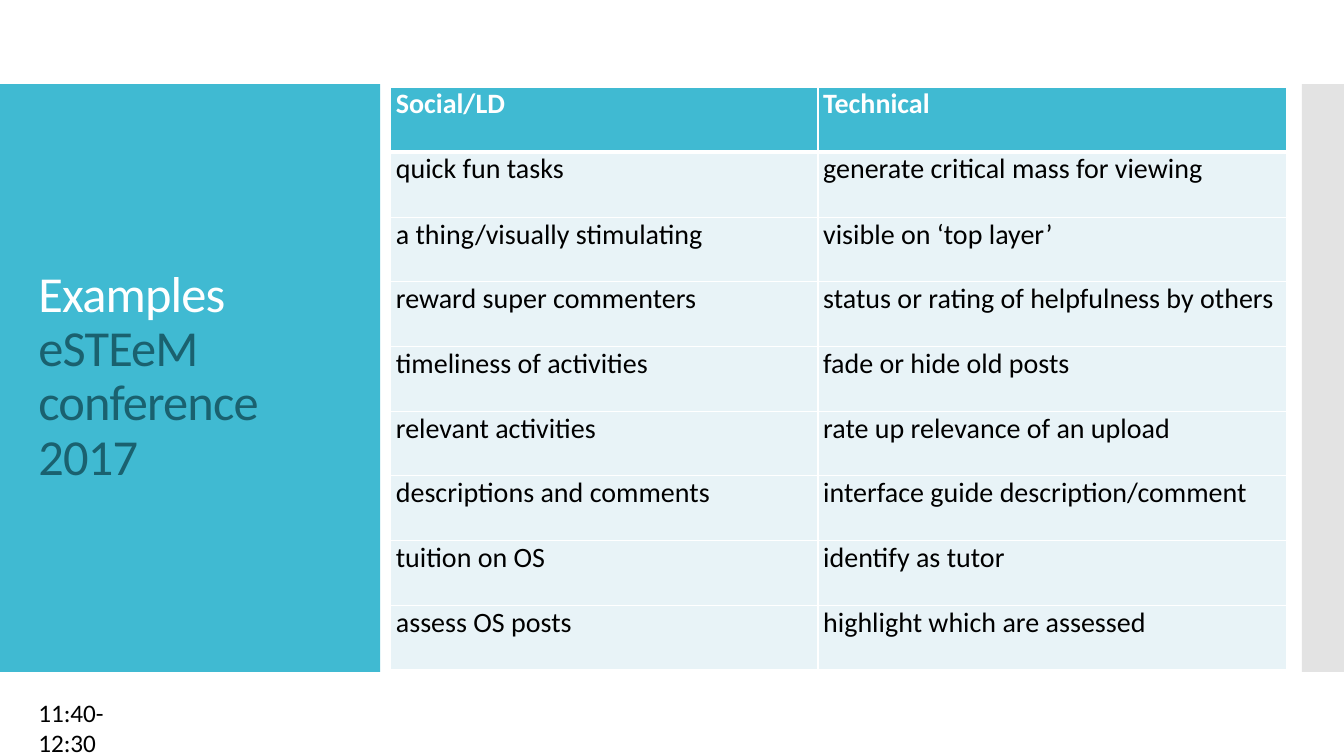
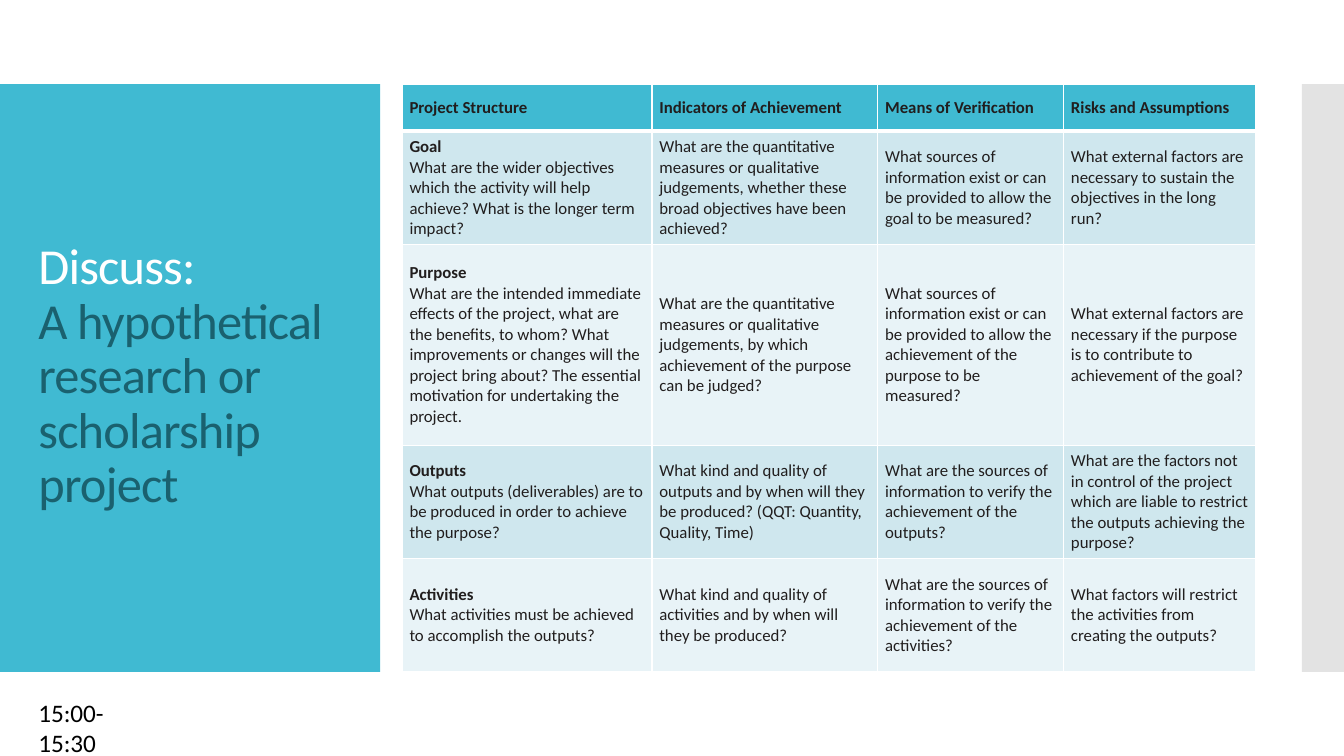
from dataclasses import dataclass

from copy import deepcopy
from lxml.etree import SubElement
from pptx import Presentation
from pptx.dml.color import RGBColor
from pptx.enum.shapes import MSO_SHAPE
from pptx.enum.text import MSO_ANCHOR, MSO_AUTO_SIZE, PP_ALIGN
from pptx.oxml.ns import qn
from pptx.util import Emu, Pt

EMU_PER_PX = 9525


def px(length):
    return Emu(length * EMU_PER_PX)


@dataclass(frozen=True)
class Theme:
    font: str = "Calibri"
    accent: str = "40BAD2"
    accent_dark: str = "1A616F"
    edge: str = "C8C8C8"
    white: str = "FFFFFF"
    black: str = "000000"
    ink: str = "211E1E"
    row_light: str = "E8F3F7"
    row_mid: str = "CFE7EE"
    title_size: int = 36
    time_size: int = 18
    ideas_size: int = 20
    framework_size: int = 12
    title_tracking: int = -60
    rule: int = 1
    header_rule: int = 3


@dataclass(frozen=True)
class TableLook:
    size: int
    header_colour: str
    text_colour: str
    row_fills: tuple
    side_margin: int
    end_margin: int
    anchor: MSO_ANCHOR


THEME = Theme()

IDEAS_LOOK = TableLook(THEME.ideas_size, THEME.white, THEME.black,
                       (THEME.row_light,), 5, 0, MSO_ANCHOR.TOP)
FRAMEWORK_LOOK = TableLook(THEME.framework_size, THEME.ink, THEME.ink,
                           (THEME.row_mid, THEME.row_light), 7, 3, MSO_ANCHOR.MIDDLE)

IDEAS = [
    ("Social/LD", "Technical"),
    ("quick fun tasks", "generate critical mass for viewing"),
    ("a thing/visually stimulating", "visible on ‘top layer’"),
    ("reward super commenters", "status or rating of helpfulness by others"),
    ("timeliness of activities", "fade or hide old posts"),
    ("relevant activities", "rate up relevance of an upload"),
    ("descriptions and comments", "interface guide description/comment"),
    ("tuition on OS", "identify as tutor"),
    ("assess OS posts", "highlight which are assessed"),
]

FRAMEWORK = [
    ("Project Structure", "Indicators of Achievement",
     "Means of Verification", "Risks and Assumptions"),
    ("Goal\nWhat are the wider objectives which the activity will help achieve? "
     "What is the longer term impact?",
     "What are the quantitative measures or qualitative judgements, "
     "whether these broad objectives have been achieved?",
     "What sources of information exist or can be provided to allow the goal to be measured?",
     "What external factors are necessary to sustain the objectives in the long run?"),
    ("Purpose\nWhat are the intended immediate effects of the project, what are the "
     "benefits, to whom? What improvements or changes will the project bring about? "
     "The essential motivation for undertaking the project.",
     "What are the quantitative measures or qualitative judgements, "
     "by which achievement of the purpose can be judged?",
     "What sources of information exist or can be provided to allow "
     "the achievement of the purpose to be measured?",
     "What external factors are necessary if the purpose is to contribute "
     "to achievement of the goal?"),
    ("Outputs\nWhat outputs (deliverables) are to be produced in order to achieve the purpose?",
     "What kind and quality of outputs and by when will they be produced? "
     "(QQT: Quantity, Quality, Time)",
     "What are the sources of information to verify the achievement of the outputs?",
     "What are the factors not in control of the project which are liable "
     "to restrict the outputs achieving the purpose?"),
    ("Activities\nWhat activities must be achieved to accomplish the outputs?",
     "What kind and quality of activities and by when will they be produced?",
     "What are the sources of information to verify the achievement of the activities?",
     "What factors will restrict the activities from creating the outputs?"),
]


class Deck:
    def __init__(self, theme):
        self.theme = theme
        self.prs = Presentation()
        self.prs.slide_width, self.prs.slide_height = px(1280), px(720)
        self.layout = self.prs.slide_layouts.get_by_name("Title Only")
        self.slide = None

    def new_slide(self):
        self.slide = self.prs.slides.add_slide(self.layout)
        if len(self.prs.slides) == 1:
            self.shared_band(0, 362, self.theme.accent)
            self.shared_band(1240, 40, self.theme.edge, opacity=50)

    def shared_band(self, left, width, colour, opacity=100):
        band = self.slide.shapes.add_shape(
            MSO_SHAPE.RECTANGLE, px(left), px(80), px(width), px(560))
        band.shadow.inherit = False
        band.line.fill.background()
        band.fill.solid()
        band.fill.fore_color.rgb = RGBColor.from_string(colour)
        if opacity < 100:
            tint = band.element.spPr.find(".//" + qn("a:srgbClr"))
            SubElement(tint, qn("a:alpha"), val=str(opacity * 1000))
        self.layout.shapes.element.append(band.element)

    def style(self, run, size, colour, bold=None):
        run.font.name = self.theme.font
        run.font.size = Pt(size)
        run.font.bold = bold
        run.font.color.rgb = RGBColor.from_string(colour)

    def title(self, lead, topic):
        title = self.slide.shapes.title
        title.left, title.top, title.width, title.height = map(px, (27, 118, 309, 483))
        frame = title.text_frame
        frame.text = f"{lead}\v{topic}"
        frame.word_wrap = True
        frame.auto_size = MSO_AUTO_SIZE.NONE
        frame.vertical_anchor = MSO_ANCHOR.MIDDLE
        paragraph = frame.paragraphs[0]
        paragraph.alignment = PP_ALIGN.LEFT
        paragraph.line_spacing = 0.9
        for run, colour in zip(paragraph.runs, (self.theme.white, self.theme.accent_dark)):
            self.style(run, self.theme.title_size, colour)
            run.font._element.set("spc", str(self.theme.title_tracking))
        line_break = paragraph._p.find(qn("a:br"))
        line_break.append(deepcopy(paragraph.runs[0].font._element))

    def time_slot(self, text):
        slot = self.slide.shapes.add_textbox(px(27), px(659), px(133), px(38))
        slot.text_frame.text = text
        slot.text_frame.word_wrap = True
        self.style(slot.text_frame.paragraphs[0].runs[0],
                   self.theme.time_size, self.theme.black)

    def table(self, left, top, widths, heights, rows, look):
        table = self.slide.shapes.add_table(
            len(rows), len(widths), px(left), px(top),
            px(sum(widths)), px(sum(heights))).table
        table.horz_banding = False
        for column, width in zip(table.columns, widths):
            column.width = px(width)
        for row, height in zip(table.rows, heights):
            row.height = px(height)
        for row_index, texts in enumerate(rows):
            for column_index, text in enumerate(texts):
                self.cell(table.cell(row_index, column_index), text, row_index, look)

    def cell(self, cell, text, row_index, look):
        header = row_index == 0
        fill = self.theme.accent if header else look.row_fills[(row_index - 1) % len(look.row_fills)]
        cell.fill.solid()
        cell.fill.fore_color.rgb = RGBColor.from_string(fill)
        cell.margin_left = cell.margin_right = px(look.side_margin)
        cell.margin_top = cell.margin_bottom = px(look.end_margin)
        cell.vertical_anchor = look.anchor
        cell.text_frame.text = text
        paragraphs = cell.text_frame.paragraphs
        for index, paragraph in enumerate(paragraphs):
            heading = header or (len(paragraphs) > 1 and index == 0)
            self.style(paragraph.runs[0], look.size,
                       look.header_colour if header else look.text_colour, heading)
        self.borders(cell, row_index)

    def borders(self, cell, row_index):
        properties = cell._tc.get_or_add_tcPr()
        thick_side = {0: "lnB", 1: "lnT"}.get(row_index)
        for position, side in enumerate(("lnL", "lnR", "lnT", "lnB")):
            weight = self.theme.header_rule if side == thick_side else self.theme.rule
            line = SubElement(properties, qn(f"a:{side}"), w=str(Pt(weight)))
            paint = SubElement(line, qn("a:solidFill"))
            SubElement(paint, qn("a:srgbClr"), val=self.theme.white)
            properties.insert(position, line)

    def save(self):
        self.prs.save("out.pptx")


def main():
    deck = Deck(THEME)

    deck.new_slide()
    deck.title("Examples", "eSTEeM conference 2017")
    idea_heights = [62, 62, 61] * 3
    deck.table(372, 83, (407, 446), idea_heights, IDEAS, IDEAS_LOOK)
    deck.time_slot("11:40-12:30")

    deck.new_slide()
    deck.title("Discuss: ", "A hypothetical research or scholarship project")
    deck.table(383, 80, (238, 215, 177, 183), (45, 108, 191, 108, 108),
               FRAMEWORK, FRAMEWORK_LOOK)
    deck.time_slot("15:00-15:30")

    deck.save()


if __name__ == "__main__":
    main()
